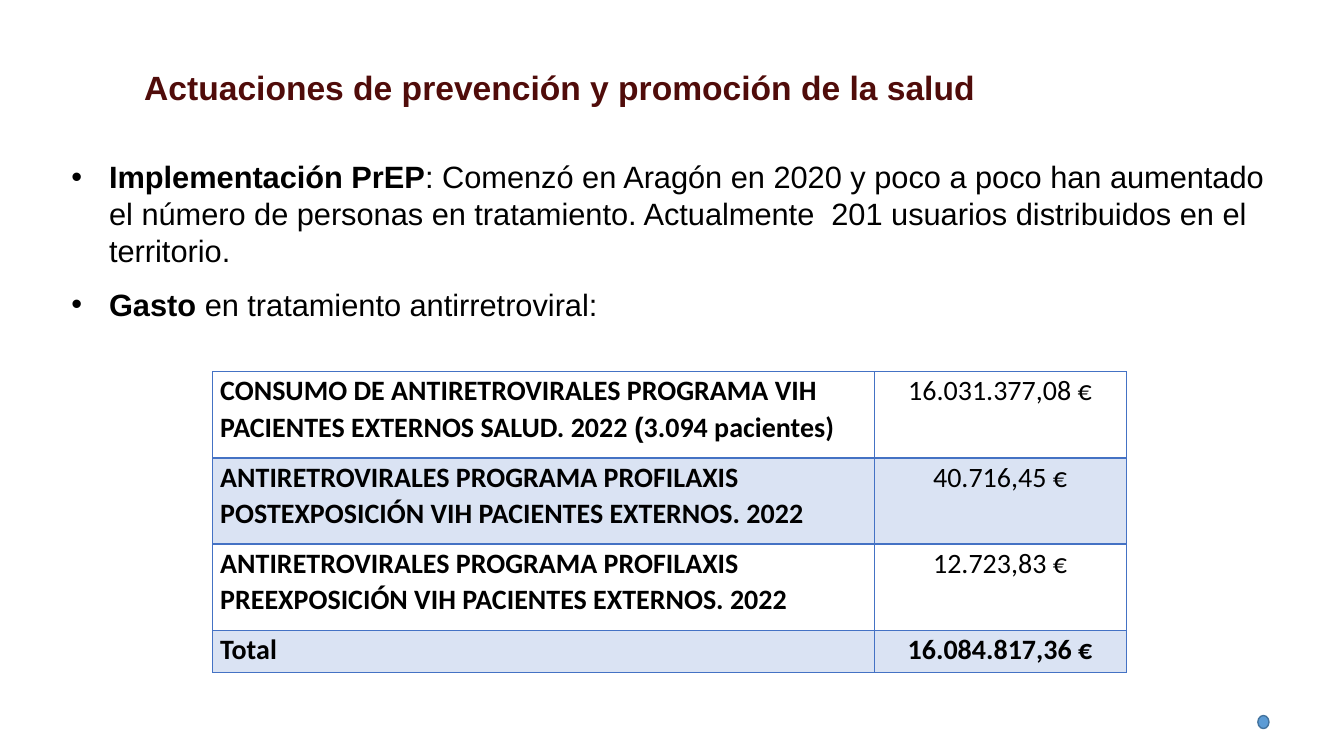
from typing import NamedTuple

from lxml.etree import SubElement
from pptx import Presentation
from pptx.dml.color import RGBColor
from pptx.enum.shapes import MSO_SHAPE
from pptx.enum.text import MSO_ANCHOR, MSO_AUTO_SIZE, PP_ALIGN
from pptx.oxml.ns import qn
from pptx.util import Cm, Pt

BLACK, MAROON = "000000", "500C0A"
BORDER, BAND = "4472C4", "DAE3F3"


class Run(NamedTuple):
    text: str
    bold: bool = False
    font: str = "Arial"


class Expense(NamedTuple):
    concept: list[Run]
    amount: Run
    height: float


def label(text: str) -> Run:
    return Run(text, True, "Calibri")


def amount(text: str, bold: bool = False) -> Run:
    return Run(text, bold, "Calibri")


BULLETS = [
    [Run("Implementación PrEP", True),
     Run(": Comenzó en Aragón en 2020 y poco a poco han aumentado el número de personas "
         "en tratamiento. Actualmente  201 usuarios distribuidos en el territorio.")],
    [Run("Gasto ", True), Run("en tratamiento antirretroviral:")],
]
EXPENSES = [
    Expense([label("CONSUMO DE ANTIRETROVIRALES PROGRAMA VIH PACIENTES EXTERNOS SALUD. 2022 "),
             Run("(", True), label("3.094 pacientes)")],
            amount("16.031.377,08 €"), 2.17),
    Expense([label("ANTIRETROVIRALES PROGRAMA PROFILAXIS POSTEXPOSICIÓN VIH "
                   "PACIENTES EXTERNOS. 2022")],
            amount("40.716,45 €"), 2.17),
    Expense([label("ANTIRETROVIRALES PROGRAMA PROFILAXIS PREEXPOSICIÓN VIH "
                   "PACIENTES EXTERNOS. 2022")],
            amount("12.723,83 €"), 2.17),
    Expense([label("Total")], amount("16.084.817,36 €", True), 1.07),
]
COLUMN_WIDTHS = [16.67, 6.35]


def rgb(color: str) -> RGBColor:
    return RGBColor.from_string(color)


def add_runs(p, runs: list[Run], *, size: float, color: str = BLACK,
             align: PP_ALIGN = PP_ALIGN.LEFT, line: float | None = None,
             after: float = 0) -> None:
    p.alignment = align
    p.line_spacing = line
    p.space_after = Pt(after)
    for run in runs:
        r = p.add_run()
        r.text = run.text
        r.font.name = run.font
        r.font.size = Pt(size)
        r.font.bold = run.bold
        r.font.color.rgb = rgb(color)


def add_bullet(p, indent: float) -> None:
    pPr = p._p.get_or_add_pPr()
    pPr.set("marL", str(Cm(indent)))
    pPr.set("indent", str(-Cm(indent)))
    SubElement(pPr, qn("a:buFont"), typeface="Arial")
    SubElement(pPr, qn("a:buChar"), char="•")


def set_borders(cell, **widths: float) -> None:
    """Draw the cell's sides, given as L, R, T and B in points."""
    tcPr = cell._tc.get_or_add_tcPr()
    for side, width in widths.items():
        ln = SubElement(tcPr, qn(f"a:ln{side}"), w=str(Pt(width)))
        fill = SubElement(ln, qn("a:solidFill"))
        SubElement(fill, qn("a:srgbClr"), val=BORDER)


def add_title(s) -> None:
    title = s.shapes.title
    title.left, title.top, title.width, title.height = Cm(3.38), Cm(1.57), Cm(28.02), Cm(1.27)
    tf = title.text_frame
    tf.word_wrap = True
    tf.auto_size = MSO_AUTO_SIZE.NONE
    tf.vertical_anchor = MSO_ANCHOR.TOP
    add_runs(tf.paragraphs[0], [Run("Actuaciones de prevención y promoción de la salud", True)],
             size=24, color=MAROON, after=6)


def add_bullets(s) -> None:
    tf = s.shapes.add_textbox(Cm(1.55), Cm(3.86), Cm(30.63), Cm(5.89)).text_frame
    tf.word_wrap = True
    for i, runs in enumerate(BULLETS):
        p = tf.add_paragraph() if i else tf.paragraphs[0]
        add_bullet(p, 0.95)
        add_runs(p, runs, size=22, after=12)


def add_expenses(s) -> None:
    table = s.shapes.add_table(len(EXPENSES), len(COLUMN_WIDTHS), Cm(5.36), Cm(9.37),
                               Cm(sum(COLUMN_WIDTHS)),
                               Cm(sum(e.height for e in EXPENSES))).table
    for column, width in zip(table.columns, COLUMN_WIDTHS):
        column.width = Cm(width)
    for i, expense in enumerate(EXPENSES):
        table.rows[i].height = Cm(expense.height)
        contents = [(expense.concept, PP_ALIGN.LEFT), ([expense.amount], PP_ALIGN.CENTER)]
        for cell, (runs, align) in zip(table.rows[i].cells, contents):
            cell.margin_left = cell.margin_right = Cm(0.19)
            cell.margin_top = cell.margin_bottom = 0
            set_borders(cell, L=1, R=1, T=2 if i == 1 else 1, B=2 if i == 0 else 1)
            if i % 2:
                cell.fill.solid()
                cell.fill.fore_color.rgb = rgb(BAND)
            else:
                cell.fill.background()
            add_runs(cell.text_frame.paragraphs[0], runs, size=20, align=align, line=1.07)


def add_dot(s) -> None:
    sp = s.shapes.add_shape(MSO_SHAPE.OVAL, Cm(31.7), Cm(18.03), Cm(0.28), Cm(0.33))
    sp.shadow.inherit = False
    sp.fill.solid()
    sp.fill.fore_color.rgb = rgb("5B9BD5")
    sp.line.color.rgb = rgb("43739E")
    sp.line.width = Pt(1)


def main() -> None:
    prs = Presentation()
    prs.slide_width, prs.slide_height = Cm(33.87), Cm(19.05)
    s = prs.slides.add_slide(prs.slide_layouts[5])
    add_bullets(s)
    add_title(s)
    add_expenses(s)
    add_dot(s)
    prs.save("out.pptx")


if __name__ == "__main__":
    main()
